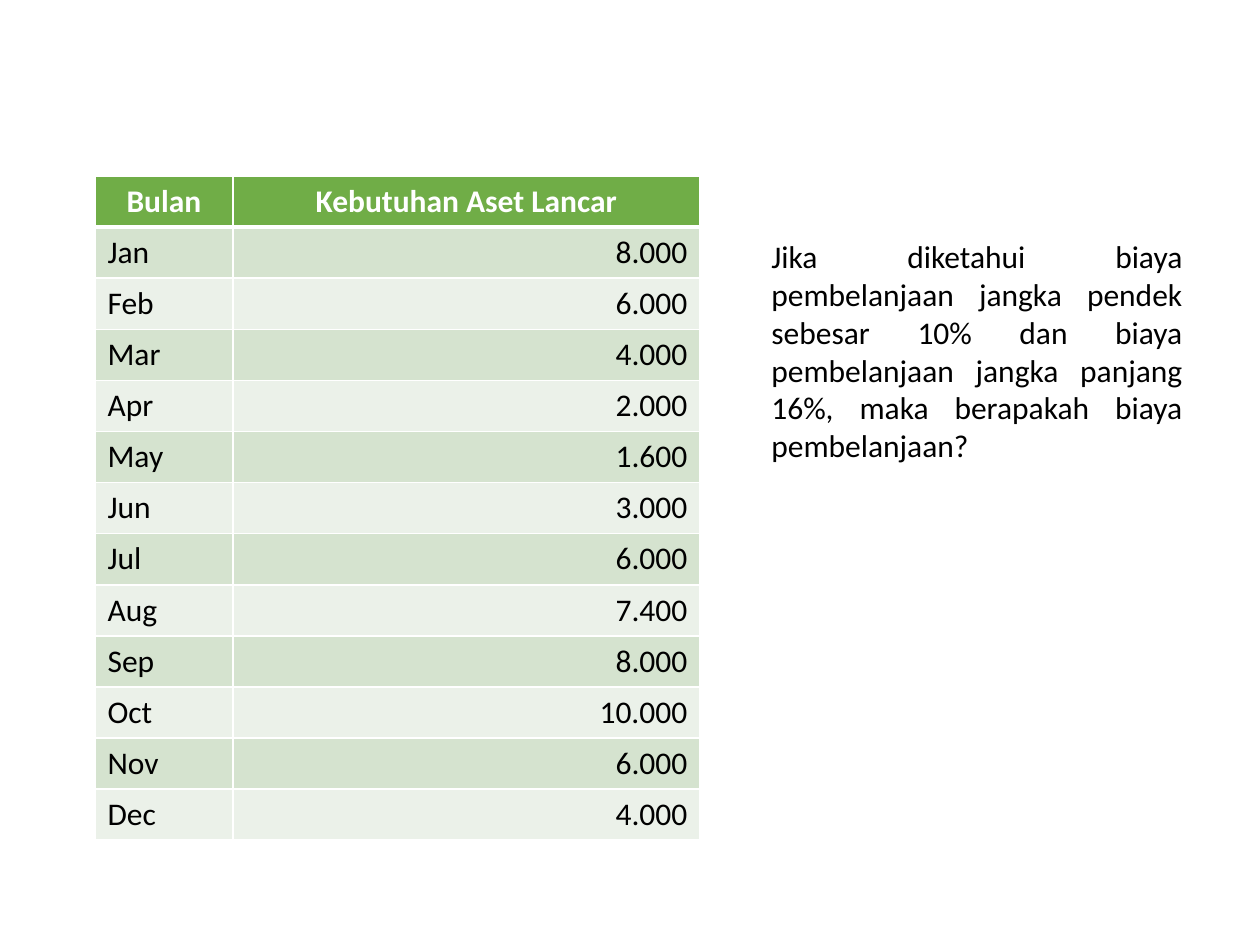
"""Build a slide with a monthly current-asset table and a financing question."""
import pptx
import pptx.dml.color
import pptx.enum.text
import pptx.oxml
import pptx.oxml.ns
import pptx.util

HEADER = ("Bulan", "Kebutuhan Aset Lancar")
NEEDS = [
    ("Jan", "8.000"), ("Feb", "6.000"), ("Mar", "4.000"), ("Apr", "2.000"),
    ("May", "1.600"), ("Jun", "3.000"), ("Jul", "6.000"), ("Aug", "7.400"),
    ("Sep", "8.000"), ("Oct", "10.000"), ("Nov", "6.000"), ("Dec", "4.000"),
]
QUESTION = (
    "Jika diketahui biaya pembelanjaan jangka pendek sebesar 10% dan biaya "
    "pembelanjaan jangka panjang 16%, maka berapakah biaya pembelanjaan?"
)
COLORS = {"header": "70AD47", "odd": "D5E3CF", "even": "EBF1E9",
          "white": "FFFFFF", "black": "000000"}
COLUMNS = (138, 467)
ROW_HEIGHT = 51
TABLE_AT = (95, 176)
QUESTION_AT = (759, 231, 436, 242)
ALIGN = pptx.enum.text.PP_ALIGN


def px(n):
    return pptx.util.Emu(n * 914400 // 126)


def rgb(name):
    return pptx.dml.color.RGBColor.from_string(COLORS[name])


def write(tf, text, align=ALIGN.LEFT, color="black", bold=False):
    p = tf.paragraphs[0]
    p.alignment = align
    r = p.add_run()
    r.text = text
    r.font.name = "Calibri"
    r.font.size = pptx.util.Pt(18)
    r.font.bold = bold
    r.font.color.rgb = rgb(color)


def style_cell(cell, fill, top, bottom):
    tc_pr = cell._tc.get_or_add_tcPr()
    for side, width in (("L", 1), ("R", 1), ("T", top), ("B", bottom)):
        tc_pr.append(pptx.oxml.parse_xml(
            f'<a:ln{side} {pptx.oxml.ns.nsdecls("a")} w="{pptx.util.Pt(width)}">'
            f'<a:solidFill><a:srgbClr val="{COLORS["white"]}"/></a:solidFill>'
            f'</a:ln{side}>'))
    cell.fill.solid()
    cell.fill.fore_color.rgb = rgb(fill)


def add_needs_table(s):
    rows = [HEADER] + NEEDS
    size = (sum(COLUMNS), ROW_HEIGHT * len(rows))
    table = s.shapes.add_table(len(rows), len(COLUMNS),
                               *map(px, TABLE_AT + size)).table
    for column, width in zip(table.columns, COLUMNS):
        column.width = px(width)
    for i, row in enumerate(rows):
        table.rows[i].height = px(ROW_HEIGHT)
        for j, text in enumerate(row):
            cell = table.cell(i, j)
            if i == 0:
                style_cell(cell, "header", 1, 3)
                write(cell.text_frame, text, align=ALIGN.CENTER,
                      color="white", bold=True)
            else:
                style_cell(cell, "odd" if i % 2 else "even", 3 if i == 1 else 1, 1)
                write(cell.text_frame, text,
                      align=ALIGN.RIGHT if j else ALIGN.LEFT)


def main():
    prs = pptx.Presentation()
    prs.slide_width, prs.slide_height = px(1260), px(945)
    s = prs.slides.add_slide(prs.slide_layouts[6])
    add_needs_table(s)
    tf = s.shapes.add_textbox(*map(px, QUESTION_AT)).text_frame
    tf.word_wrap = True
    tf.auto_size = pptx.enum.text.MSO_AUTO_SIZE.SHAPE_TO_FIT_TEXT
    write(tf, QUESTION, align=ALIGN.JUSTIFY)
    prs.save("out.pptx")


if __name__ == "__main__":
    main()
